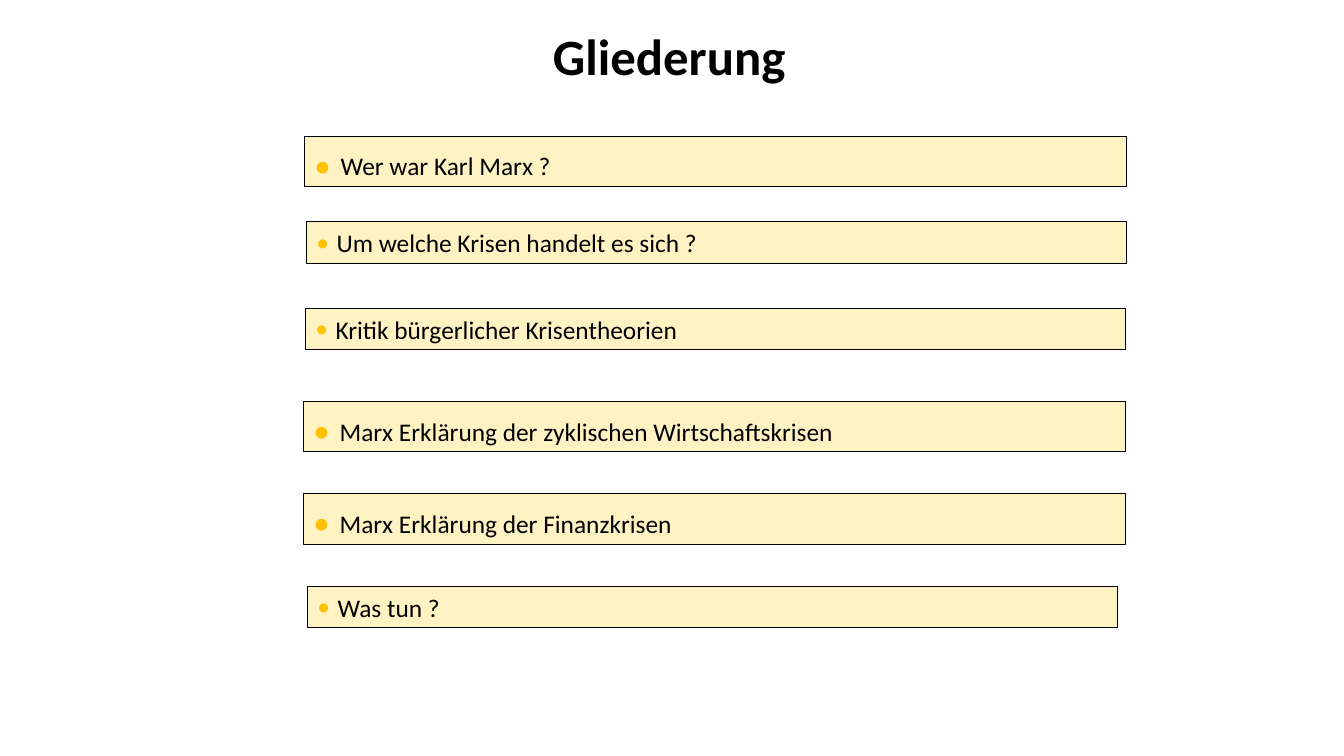
from lxml import etree
from pptx import Presentation
from pptx.dml.color import RGBColor
from pptx.enum.shapes import MSO_SHAPE
from pptx.enum.text import MSO_ANCHOR, PP_ALIGN
from pptx.oxml.ns import qn
from pptx.util import Inches, Pt

COLORS = {"text": "000000", "box": "FFCC00", "bullet": "FFC000"}
FONT = "Calibri"

# Topic, left, top, width, large bullet
TOPICS = [
    ("Wer war Karl Marx ?", 3.02, 1.35, 8.15, True),
    ("Um welche Krisen handelt es sich ?", 3.04, 2.2, 8.13, False),
    ("Kritik bürgerlicher Krisentheorien", 3.03, 3.06, 8.13, False),
    ("Marx Erklärung der zyklischen Wirtschaftskrisen", 3.01, 3.98, 8.15, True),
    ("Marx Erklärung der Finanzkrisen", 3.01, 4.9, 8.15, True),
    ("Was tun ?", 3.05, 5.82, 8.03, False),
]


def add_run(paragraph, text, size, bold=False):
    run = paragraph.add_run()
    run.text = text
    run.font.name = FONT
    run.font.size = Pt(size)
    run.font.bold = bold
    run.font.color.rgb = RGBColor.from_string(COLORS["text"])


def add_bullet(paragraph, indent, percent):
    properties = paragraph._p.get_or_add_pPr()
    properties.set("marL", str(Inches(indent)))
    properties.set("indent", str(-Inches(indent)))
    color = etree.SubElement(properties, qn("a:buClr"))
    etree.SubElement(color, qn("a:srgbClr"), val=COLORS["bullet"])
    etree.SubElement(properties, qn("a:buSzPct"), val=str(percent * 1000))
    etree.SubElement(properties, qn("a:buFont"), typeface=FONT)
    etree.SubElement(properties, qn("a:buChar"), char="•")


presentation = Presentation()
presentation.slide_width = Inches(13.33)
presentation.slide_height = Inches(7.5)
slide = presentation.slides.add_slide(presentation.slide_layouts[5])

# Title
title = slide.shapes.title
title.left, title.top = Inches(2.36), Inches(0.19)
title.width, title.height = Inches(8.56), Inches(0.71)
title.text_frame.vertical_anchor = MSO_ANCHOR.TOP
heading = title.text_frame.paragraphs[0]
heading.alignment = PP_ALIGN.CENTER
add_run(heading, "Gliederung", 36.3, bold=True)

# Outline boxes
for topic, left, top, width, large in TOPICS:
    height = 0.5 if large else 0.41
    box = slide.shapes.add_shape(
        MSO_SHAPE.RECTANGLE, Inches(left), Inches(top), Inches(width), Inches(height)
    )
    box.shadow.inherit = False
    box.fill.solid()
    box.fill.fore_color.rgb = RGBColor.from_string(COLORS["box"])
    fill_color = box.fill._xPr.find(qn("a:solidFill"))[0]
    etree.SubElement(fill_color, qn("a:alpha"), val="23000")
    box.line.color.rgb = RGBColor.from_string(COLORS["text"])
    box.line.width = Pt(0.75)

    frame = box.text_frame
    frame.word_wrap = True
    frame.vertical_anchor = MSO_ANCHOR.MIDDLE
    frame.margin_top = Inches(0.14 if large else 0.05)
    frame.margin_bottom = Inches(0.05)
    paragraph = frame.paragraphs[0]
    paragraph.alignment = PP_ALIGN.LEFT
    add_bullet(paragraph, 0.26 if large else 0.2, 130 if large else 100)
    add_run(paragraph, topic, 18.1)

presentation.save("out.pptx")
